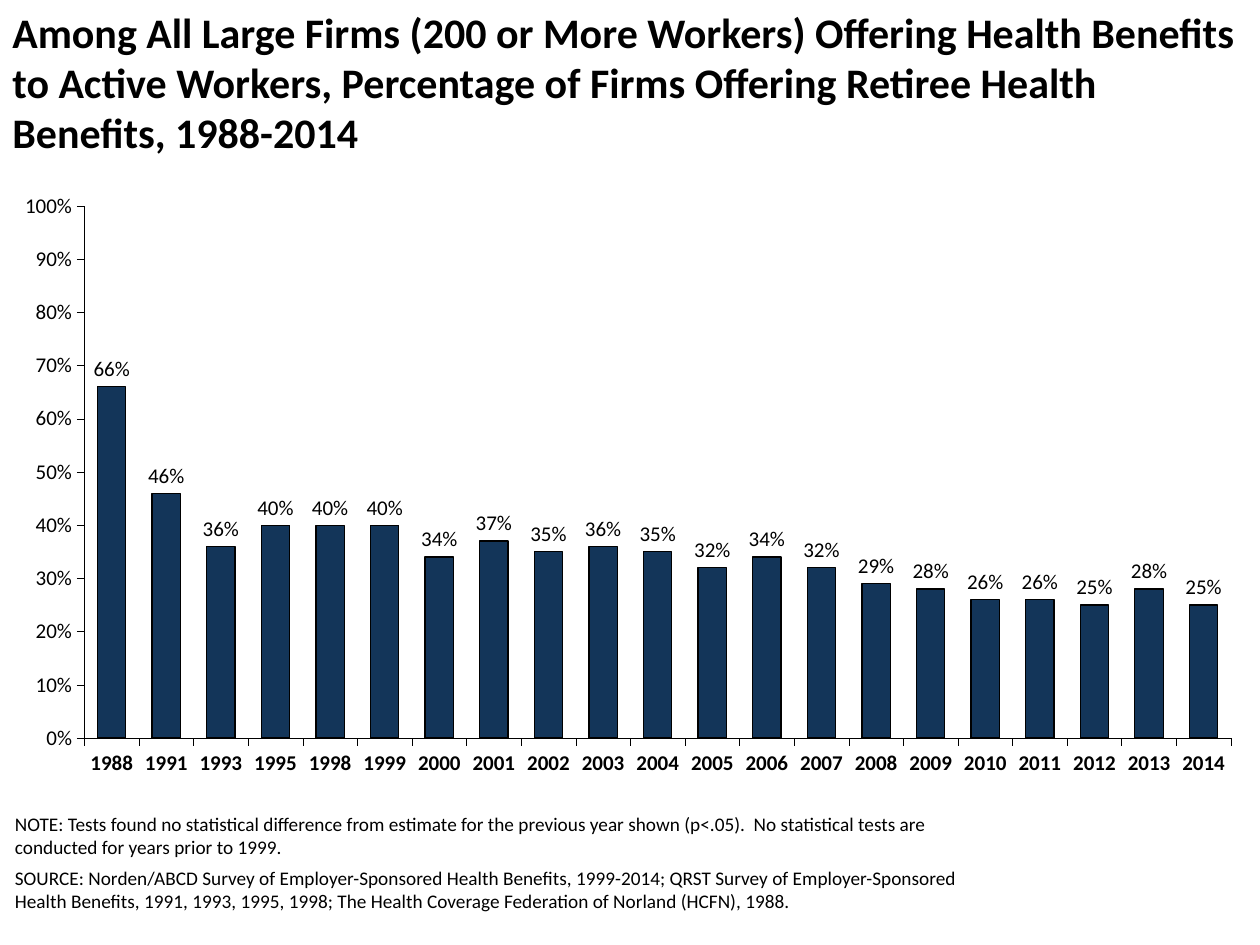
from lxml import etree
from pptx import Presentation
from pptx.chart.data import CategoryChartData
from pptx.dml.color import RGBColor
from pptx.enum.chart import XL_CHART_TYPE as ChartType, XL_LABEL_POSITION as LabelPos, XL_TICK_MARK as Tick
from pptx.enum.text import MSO_ANCHOR as Anchor
from pptx.oxml import parse_xml
from pptx.oxml.ns import nsdecls
from pptx.util import Inches, Pt

FONT = "Calibri"
BLACK = "000000"
NAVY = "133559"

TITLE = ("Among All Large Firms (200 or More Workers) Offering Health Benefits to Active Workers, "
         "Percentage of Firms Offering Retiree Health Benefits, 1988-2014")
NOTES = [
    "NOTE: Tests found no statistical difference from estimate for the previous year shown (p<.05).  "
    "No statistical tests are conducted for years prior to 1999.",
    "SOURCE: Norden/ABCD Survey of Employer-Sponsored Health Benefits, 1999-2014; "
    "QRST Survey of Employer-Sponsored Health Benefits, 1991, 1993, 1995, 1998; "
    "The Health Coverage Federation of Norland (HCFN), 1988.",
]
YEARS = [1988, 1991, 1993, 1995, *range(1998, 2015)]
PERCENTS = [66, 46, 36, 40, 40, 40, 34, 37, 35, 36, 35, 32, 34, 32, 29, 28, 26, 26, 25, 28, 25]


def rgb(value):
    return RGBColor.from_string(value)


def style_font(font, size, bold=False):
    font.name = FONT
    font.size = Pt(size)
    font.bold = bold
    font.color.rgb = rgb(BLACK)


def style_line(line, width):
    line.color.rgb = rgb(BLACK)
    line.width = Pt(width)


def add_text(s, box, paragraphs, size, bold=False, space_before=0):
    tf = s.shapes.add_textbox(*box).text_frame
    tf.word_wrap = True
    tf.vertical_anchor = Anchor.TOP
    tf.text = "\n".join(paragraphs)
    for p in tf.paragraphs:
        p.space_before = Pt(space_before)
        for r in p.runs:
            style_font(r.font, size, bold)


def style_axis(axis, bold=False):
    axis.has_major_gridlines = False
    axis.major_tick_mark = Tick.OUTSIDE
    axis.minor_tick_mark = Tick.NONE
    style_font(axis.tick_labels.font, 12, bold)
    style_line(axis.format.line, 0.23)


def set_plot_area(chart, x, y, w, h):
    area = chart.plots[0]._element.getparent()
    for old in area.xpath("c:layout"):
        area.remove(old)
    layout = parse_xml(f"<c:layout {nsdecls('c')}><c:manualLayout/></c:layout>")
    settings = {"layoutTarget": "inner", "xMode": "edge", "yMode": "edge",
                "x": x, "y": y, "w": w, "h": h}
    for name, value in settings.items():
        etree.SubElement(layout[0], f"{{{layout.nsmap['c']}}}{name}", val=str(value))
    area.insert(0, layout)


def add_bar_chart(s, box):
    data = CategoryChartData(number_format="0%")
    data.categories = [str(year) for year in YEARS]
    data.add_series("Series 1", [percent / 100 for percent in PERCENTS])
    chart = s.shapes.add_chart(ChartType.COLUMN_CLUSTERED, *box, data).chart
    chart.has_legend = False
    chart.has_title = False
    style_font(chart.font, 12)
    set_plot_area(chart, 0.075, 0.028, 0.91, 0.882)

    style_axis(chart.category_axis, bold=True)
    axis = chart.value_axis
    style_axis(axis)
    axis.minimum_scale, axis.maximum_scale, axis.major_unit = 0, 1, 0.1
    axis.tick_labels.number_format = "0%"
    axis.tick_labels.number_format_is_linked = False

    plot = chart.plots[0]
    plot.gap_width = 93
    plot.vary_by_categories = False
    bars = plot.series[0]
    bars.format.fill.solid()
    bars.format.fill.fore_color.rgb = rgb(NAVY)
    style_line(bars.format.line, 0.75)
    labels = bars.data_labels
    labels.show_value = True
    labels.position = LabelPos.OUTSIDE_END
    labels.number_format = "0%"
    labels.number_format_is_linked = False
    style_font(labels.font, 12)


def box(*lengths):
    return [Inches(length) for length in lengths]


def main():
    prs = Presentation()
    prs.slide_width, prs.slide_height = box(10, 7.5)
    s = prs.slides.add_slide(prs.slide_layouts[6])
    add_text(s, box(0, 0, 10, 1.67), [TITLE], 24, bold=True)
    add_bar_chart(s, box(-0.08, 1.5, 10, 4.79))
    add_text(s, box(0.02, 6.4, 8.03, 0.9), NOTES, 11, space_before=4)
    prs.save("out.pptx")


if __name__ == "__main__":
    main()
